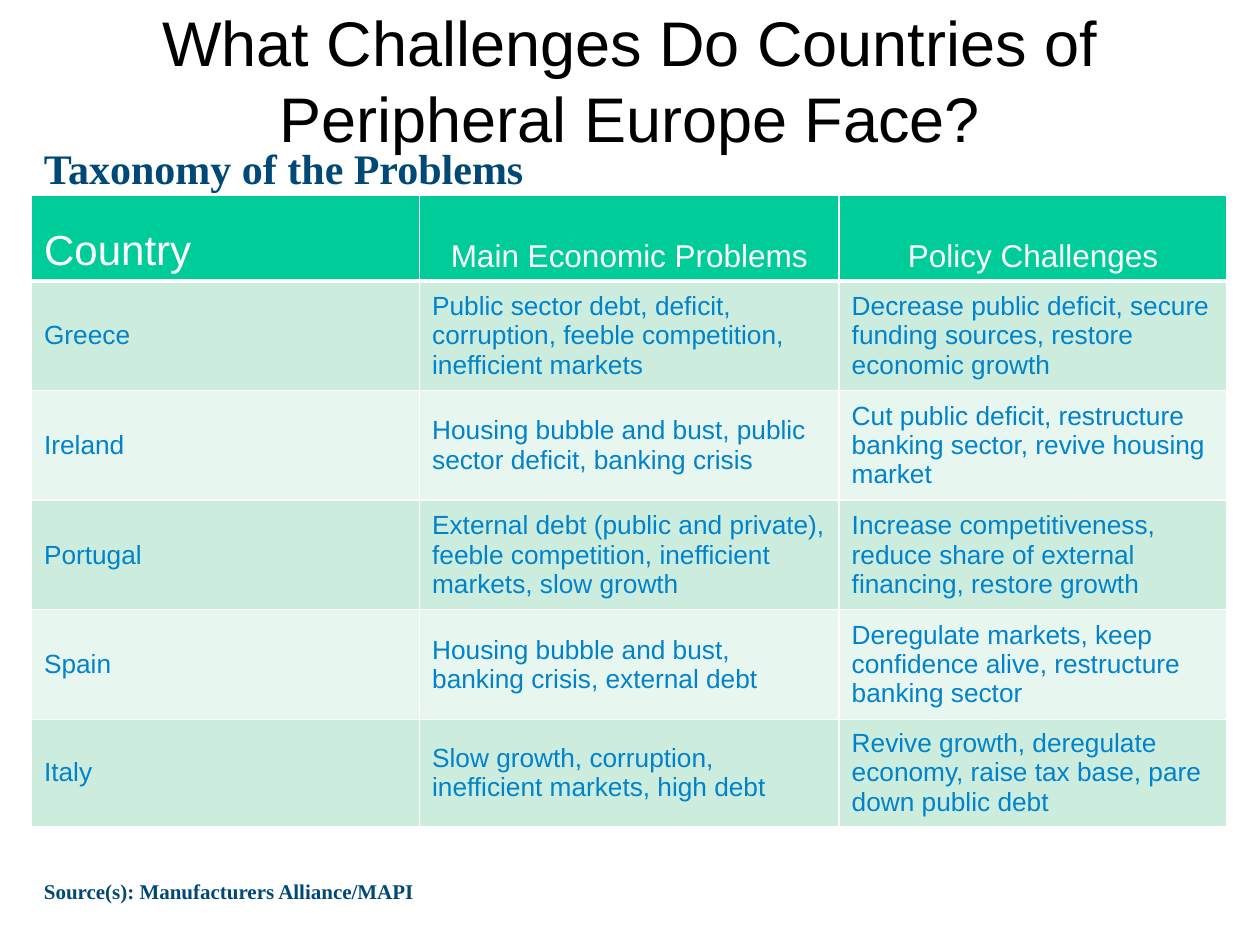
"""Build a slide with a table of economic problems in peripheral Europe."""
from lxml.etree import SubElement
from pptx import Presentation
from pptx.dml.color import RGBColor
from pptx.enum.text import MSO_ANCHOR, PP_ALIGN
from pptx.oxml.ns import qn
from pptx.util import Inches, Pt

COLORS = {"black": "000000", "white": "FFFFFF", "navy": "004976", "blue": "0083CA",
          "header": "00CC99", "dark band": "CCECDE", "light band": "E7F6EF"}
FORMATS = {
    "title": {"size": Pt(36), "name": "Arial", "bold": False, "color": "black"},
    "subtitle": {"size": Pt(24), "name": "Times New Roman", "bold": True, "color": "navy"},
    "source": {"size": Pt(12), "name": "Times New Roman", "bold": True, "color": "navy"},
    "first header": {"size": Pt(24), "name": "Arial", "bold": False, "color": "white"},
    "header": {"size": Pt(18), "name": "Arial", "bold": False, "color": "white"},
    "body": {"size": Pt(15), "name": "Arial", "bold": False, "color": "blue"},
}


def write(frame, text, style, align=PP_ALIGN.LEFT):
    frame.word_wrap = True
    frame.text = text
    for para in frame.paragraphs:
        para.alignment = align
        for span in para.runs:
            for key, value in FORMATS[style].items():
                if key == "color":
                    span.font.color.rgb = RGBColor.from_string(COLORS[value])
                else:
                    setattr(span.font, key, value)


def add_border(cell, side, width):
    line = SubElement(cell._tc.get_or_add_tcPr(), qn(f"a:{side}"), w=str(Pt(width)))
    fill = SubElement(line, qn("a:solidFill"))
    SubElement(fill, qn("a:srgbClr"), val=COLORS["white"])


deck = Presentation()
deck.slide_width, deck.slide_height = Inches(10), Inches(7.5)
page = deck.slides.add_slide(deck.slide_layouts[6])

texts = [
    ("What Challenges Do Countries of Peripheral Europe Face?", "title",
     (0.75, 0.17, 8.5, 0.92), PP_ALIGN.CENTER, MSO_ANCHOR.MIDDLE),
    ("Source(s): Manufacturers Alliance/MAPI", "source",
     (0.25, 6.92, 8.42, 0.3), PP_ALIGN.LEFT, MSO_ANCHOR.TOP),
    ("Taxonomy of the Problems", "subtitle",
     (0.25, 1.08, 9.35, 0.42), PP_ALIGN.LEFT, MSO_ANCHOR.TOP),
]
for text, style, place, align, anchor in texts:
    box = page.shapes.add_textbox(*(Inches(length) for length in place))
    write(box.text_frame, text, style, align)
    box.text_frame.vertical_anchor = anchor

rows = [
    ("Country", "Main Economic Problems", "Policy Challenges"),
    ("Greece", "Public sector debt, deficit,\ncorruption, feeble competition, inefficient markets",
     "Decrease public deficit, secure funding sources, restore economic growth"),
    ("Ireland", "Housing bubble and bust, public sector deficit, banking crisis",
     "Cut public deficit, restructure banking sector, revive housing market"),
    ("Portugal",
     "External debt (public and private), feeble competition, inefficient markets, slow growth",
     "Increase competitiveness, reduce share of external financing, restore growth"),
    ("Spain", "Housing bubble and bust, banking crisis, external debt",
     "Deregulate markets, keep confidence alive, restructure banking sector"),
    ("Italy", "Slow growth, corruption, inefficient markets, high debt",
     "Revive growth, deregulate economy, raise tax base, pare down public debt"),
]
widths = [3.08, 3.33, 3.08]
heights = [0.68] + [0.87] * 4 + [0.77]
table = page.shapes.add_table(len(rows), len(widths), Inches(0.25), Inches(1.55),
                              Inches(sum(widths)), Inches(sum(heights))).table
for column, width in zip(table.columns, widths):
    column.width = Inches(width)
for row_index, (row, height) in enumerate(zip(rows, heights)):
    table.rows[row_index].height = Inches(height)
    is_header = row_index == 0
    band = "header" if is_header else "dark band" if row_index % 2 else "light band"
    for column_index, text in enumerate(row):
        cell = table.cell(row_index, column_index)
        centered = is_header and column_index > 0
        style = "body" if not is_header else "header" if centered else "first header"
        write(cell.text_frame, text, style, PP_ALIGN.CENTER if centered else PP_ALIGN.LEFT)
        cell.vertical_anchor = MSO_ANCHOR.BOTTOM if is_header else MSO_ANCHOR.MIDDLE
        for side in ("lnL", "lnR", "lnT", "lnB"):
            add_border(cell, side, 3 if is_header and side == "lnB" else 1)
        cell.fill.solid()
        cell.fill.fore_color.rgb = RGBColor.from_string(COLORS[band])

deck.save("out.pptx")
